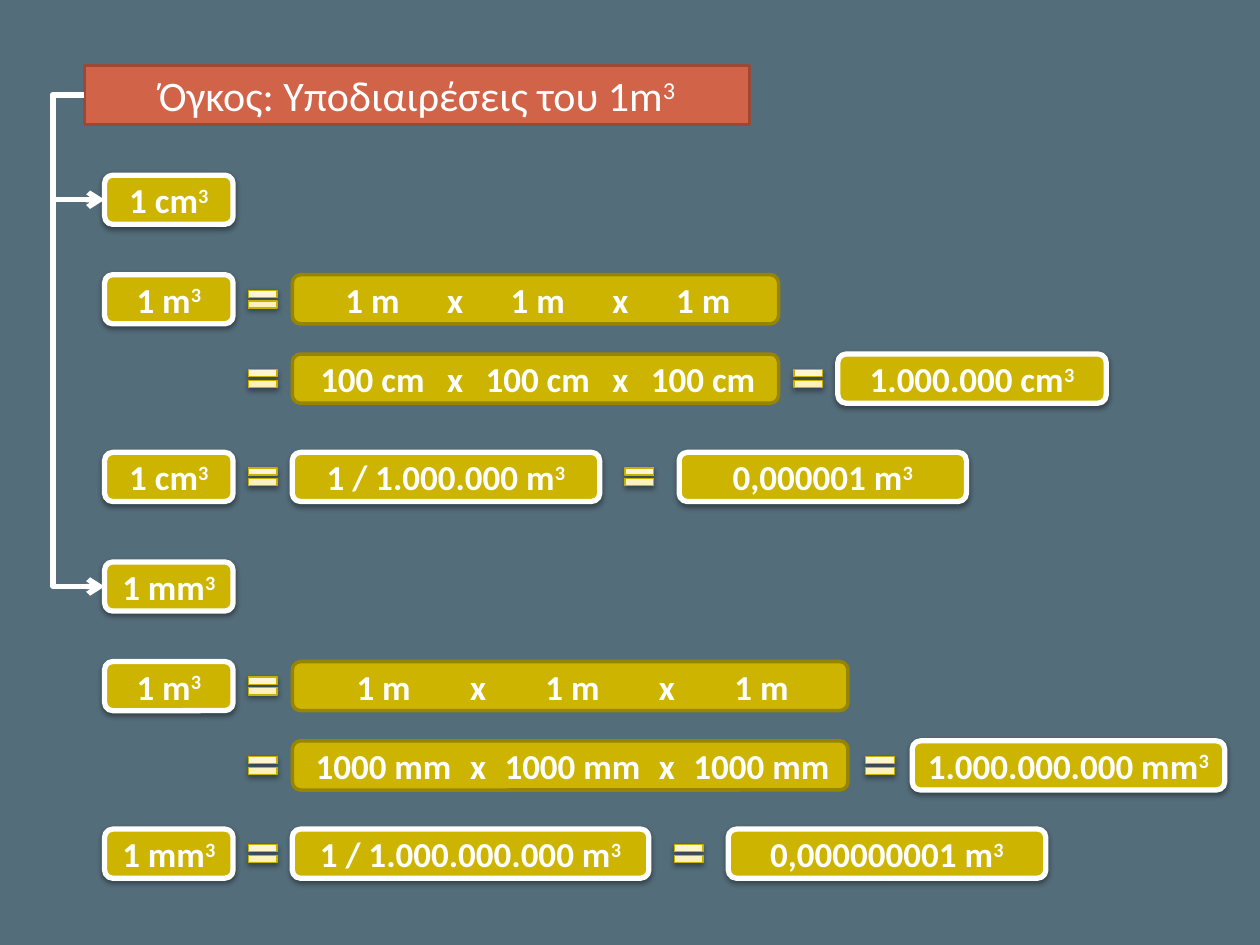
from lxml import etree
from pptx import Presentation
from pptx.dml.color import RGBColor
from pptx.enum.shapes import MSO_CONNECTOR, MSO_SHAPE
from pptx.enum.text import MSO_ANCHOR, MSO_AUTO_SIZE, PP_ALIGN
from pptx.oxml import parse_xml
from pptx.oxml.ns import nsdecls, qn
from pptx.util import Inches, Pt

ROUND, EQUAL = MSO_SHAPE.ROUNDED_RECTANGLE, MSO_SHAPE.MATH_EQUAL
ELBOW = MSO_CONNECTOR.ELBOW
MIDDLE, NO_FIT = MSO_ANCHOR.MIDDLE, MSO_AUTO_SIZE.NONE
CENTER, LEFT = PP_ALIGN.CENTER, PP_ALIGN.LEFT

SLATE = RGBColor(0x54, 0x6D, 0x7A)
RUST = RGBColor(0xD1, 0x63, 0x49)
RUST_EDGE = RGBColor(0x9B, 0x49, 0x36)
GOLD = RGBColor(0xCC, 0xB4, 0x00)
GOLD_EDGE = RGBColor(0x97, 0x85, 0x00)
SIGN_EDGE = RGBColor(0xC8, 0xB0, 0x00)
WHITE = RGBColor(0xFF, 0xFF, 0xFF)
SIGN_STOPS = [(0, "FFEBA5"), (35, "FFF0BF"), (100, "FFF9E7")]

TITLE = "Όγκος: Υποδιαιρέσεις του 1m"
TITLE_BOX = (0.67, 0.52, 5.28, 0.47)
UNIT_X, UNIT_W, BOX_H = 0.83, 1.02, 0.39
SIGN_W, SIGN_H = 0.31, 0.24
NEAR, MID, FAR = 0.08, 0.1, 0.16
TRUNK_X = 0.42
FACTOR_STEP = 0.17

# Each row: top, unit label, then (gap around the sign, content, width).
# A list of factors is a product; a string is a volume with a cubed unit.
ROWS = [
    (1.39, "1 cm", []),
    (2.18, "1 m", [(NEAR, ["1 m"] * 3, 3.86)]),
    (2.81, None, [(NEAR, ["100 cm"] * 3, 3.86), (NEAR, "1.000.000 cm", 2.13)]),
    (3.59, "1 cm", [(NEAR, "1 / 1.000.000 m", 2.44), (FAR, "0,000001 m", 2.28)]),
    (4.46, "1 mm", []),
    (5.25, "1 m", [(NEAR, ["1 m"] * 3, 4.41)]),
    (5.88, None, [(NEAR, ["1000 mm"] * 3, 4.41), (MID, "1.000.000.000 mm", 2.48)]),
    (6.58, "1 mm", [(NEAR, "1 / 1.000.000.000 m", 2.83), (FAR, "0,000000001 m", 2.52)]),
]


def paint(s, fill, edge, width):
    s.fill.solid()
    s.fill.fore_color.rgb = fill
    s.line.color.rgb = edge
    s.line.width = Pt(width)


def write(s, text, size, bold, cubed):
    tf = s.text_frame
    tf.word_wrap, tf.auto_size, tf.vertical_anchor = True, NO_FIT, MIDDLE
    tf.margin_left = tf.margin_right = tf.margin_top = tf.margin_bottom = 0
    p = tf.paragraphs[0]
    p.text = text
    p.alignment = CENTER
    if cubed:
        r = p.add_run()
        r.text = "3"
        r.font._element.set("baseline", "30000")
    for r in p.runs:
        r.font.name, r.font.size, r.font.bold = "Calibri", Pt(size), bold
        r.font.color.rgb = WHITE
    return p


def add_shape(slide, kind, x, y, w, h, shadow):
    s = slide.shapes.add_shape(kind, Inches(x), Inches(y), Inches(w), Inches(h))
    s.shadow.inherit = False
    if shadow:
        s._element.spPr.find(qn("a:effectLst")).append(parse_xml(
            f'<a:outerShdw {nsdecls("a")} blurRad="39370" dist="20320" dir="5400000" '
            'rotWithShape="0"><a:srgbClr val="000000"><a:alpha val="38000"/>'
            '</a:srgbClr></a:outerShdw>'))
    return s


def add_volume(slide, text, x, y, w):
    s = add_shape(slide, ROUND, x, y, w, BOX_H, True)
    paint(s, GOLD, WHITE, 3)
    write(s, text, 20, True, True)


def add_product(slide, factors, x, y, w):
    s = add_shape(slide, ROUND, x, y, w, BOX_H, False)
    paint(s, GOLD, GOLD_EDGE, 2)
    p = write(s, "\t" + "\tx\t".join(factors), 20, True, False)
    p.alignment = LEFT
    tabs = etree.SubElement(p._p.get_or_add_pPr(), qn("a:tabLst"))
    for i in range(2 * len(factors) - 1):
        share = 0.5 + (i - len(factors) + 1) * FACTOR_STEP
        etree.SubElement(tabs, qn("a:tab"), pos=str(Inches(w * share)), algn="ctr")


def add_sign(slide, x, y):
    s = add_shape(slide, EQUAL, x, y + (BOX_H - SIGN_H) / 2, SIGN_W, SIGN_H, True)
    s.line.color.rgb = SIGN_EDGE
    s.line.width = Pt(0.75)
    stops = "".join(f'<a:gs pos="{pos * 1000}"><a:srgbClr val="{color}"/></a:gs>'
                    for pos, color in SIGN_STOPS)
    s._element.spPr.find(qn("a:prstGeom")).addnext(parse_xml(
        f'<a:gradFill {nsdecls("a")} rotWithShape="1"><a:gsLst>{stops}</a:gsLst>'
        '<a:lin ang="16200000" scaled="0"/></a:gradFill>'))


def add_branch(slide, y):
    x0, y0 = TITLE_BOX[0], TITLE_BOX[1] + TITLE_BOX[3] / 2
    c = slide.shapes.add_connector(ELBOW, Inches(x0), Inches(y0), Inches(UNIT_X), Inches(y))
    c.line.color.rgb = WHITE
    c.line.width = Pt(3)
    etree.SubElement(c.line._get_or_add_ln(), qn("a:tailEnd"), type="arrow")
    spPr = c._element.spPr
    etree.SubElement(spPr, qn("a:effectLst"))
    bend = round((TRUNK_X - x0) / (UNIT_X - x0) * 100000)
    guides = spPr.find(qn("a:prstGeom")).get_or_add_avLst()
    etree.SubElement(guides, qn("a:gd"), name="adj1", fmla=f"val {bend}")


def add_title(slide):
    s = slide.shapes.title
    s.left, s.top, s.width, s.height = map(Inches, TITLE_BOX)
    s._element.spPr.find(qn("a:xfrm")).addnext(parse_xml(
        f'<a:prstGeom {nsdecls("a")} prst="roundRect"><a:avLst/></a:prstGeom>'))
    paint(s, RUST, RUST_EDGE, 2)
    write(s, TITLE, 24, False, True)


def main():
    """Build the slide on the subdivisions of the cubic metre."""
    prs = Presentation()
    prs.slide_width, prs.slide_height = Inches(10), Inches(7.5)
    slide = prs.slides.add_slide(prs.slide_layouts[5])
    slide.background.fill.solid()
    slide.background.fill.fore_color.rgb = SLATE
    add_title(slide)
    for y, unit, terms in ROWS:
        if unit:
            add_volume(slide, unit, UNIT_X, y, UNIT_W)
        if not terms:
            add_branch(slide, y + BOX_H / 2)
        x = UNIT_X + UNIT_W
        for gap, content, w in terms:
            add_sign(slide, x + gap, y)
            x += 2 * gap + SIGN_W
            add_term = add_product if isinstance(content, list) else add_volume
            add_term(slide, content, x, y, w)
            x += w
    prs.save("out.pptx")


if __name__ == "__main__":
    main()
